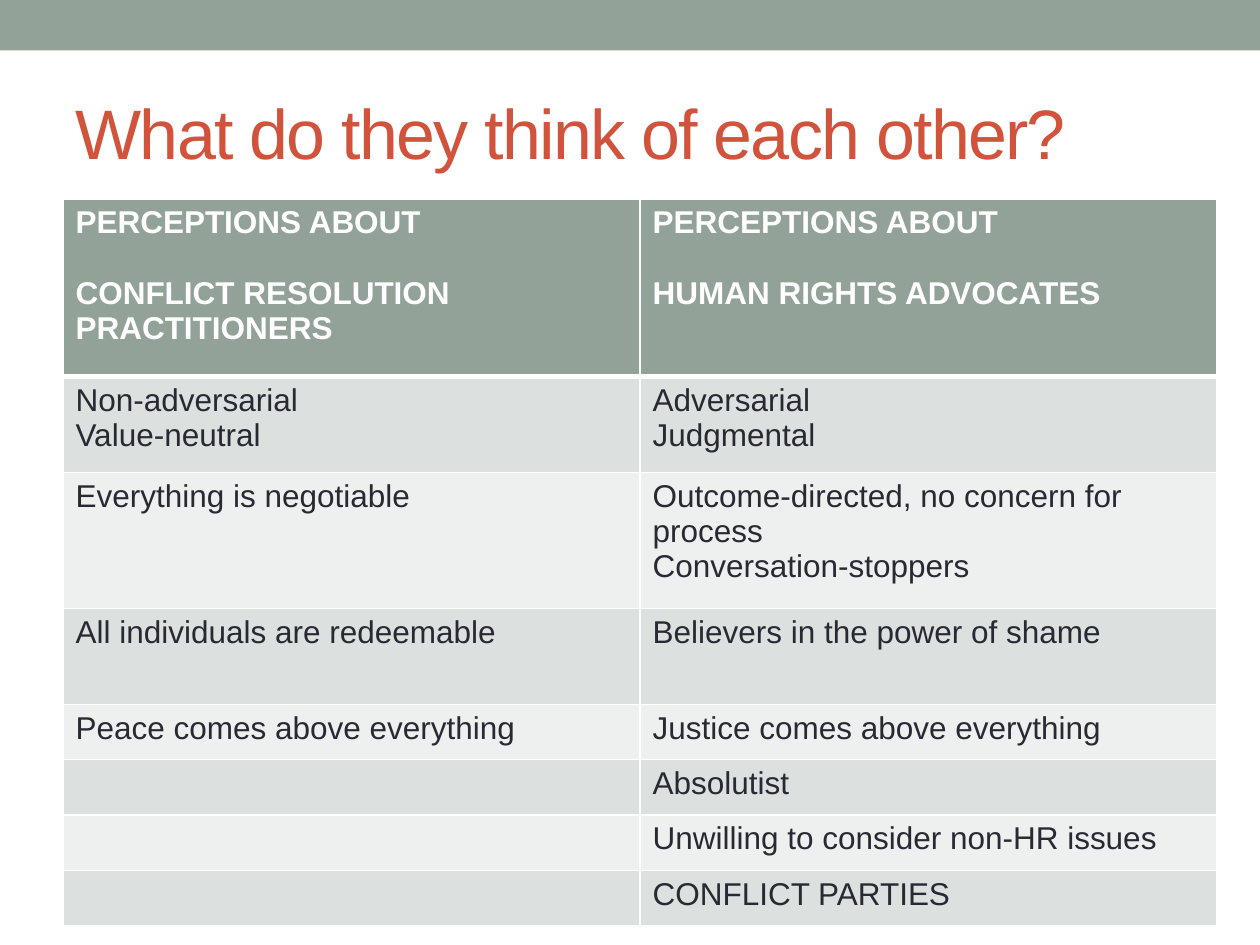
from lxml.etree import SubElement
from pptx import Presentation
from pptx.dml.color import RGBColor
from pptx.enum.shapes import MSO_SHAPE as Shape
from pptx.enum.text import MSO_ANCHOR as Anchor, PP_ALIGN as Align
from pptx.oxml.ns import qn
from pptx.util import Inches, Pt

SAGE = RGBColor(0x93, 0xA2, 0x99)
RED = RGBColor(0xD2, 0x53, 0x3C)
INK = RGBColor(0x29, 0x29, 0x34)
WHITE = RGBColor(0xFF, 0xFF, 0xFF)
BANDS = RGBColor(0xDC, 0xE0, 0xDE), RGBColor(0xEE, 0xF0, 0xEF)
FONT = "Arial"

# Content: each cell is a list of paragraphs
TITLE = "What do they think of each other?"
ROWS = [
    (["PERCEPTIONS ABOUT", "CONFLICT RESOLUTION PRACTITIONERS"],
     ["PERCEPTIONS ABOUT", "HUMAN RIGHTS ADVOCATES"]),
    (["Non-adversarial", "Value-neutral"], ["Adversarial", "Judgmental"]),
    (["Everything is negotiable"],
     ["Outcome-directed, no concern for process", "Conversation-stoppers"]),
    (["All individuals are redeemable"], ["Believers in the power of shame"]),
    (["Peace comes above everything"], ["Justice comes above everything"]),
    ([], ["Absolutist"]),
    ([], ["Unwilling to consider non-HR issues"]),
    ([], ["CONFLICT PARTIES"]),
]
HEIGHTS = [1.41, 0.76, 1.08, 0.76] + [0.44] * 4
COL = 4.58


def set_font(par, size, color, bold=False):
    font = par.font
    font.name, font.size, font.bold = FONT, Pt(size), bold
    font.color.rgb = color


def add_edges(cell, widths):
    props = cell._tc.get_or_add_tcPr()
    for side, width in widths.items():
        line = SubElement(props, qn(f"a:ln{side}"), w=str(Pt(width)))
        fill = SubElement(line, qn("a:solidFill"))
        SubElement(fill, qn("a:srgbClr"), val=str(WHITE))


def fill_cell(cell, lines, row):
    head = row == 0
    add_edges(cell, {"L": 1, "R": 1, "T": 3 if row == 1 else 1,
                     "B": 3 if head else 1})
    cell.fill.solid()
    cell.fill.fore_color.rgb = SAGE if head else BANDS[(row - 1) % 2]
    frame = cell.text_frame
    frame.text = "\n".join(lines)
    for i, par in enumerate(frame.paragraphs):
        set_font(par, 18, WHITE if head else INK, head)
        if head and i:
            par.space_before = Pt(20)


def main():
    prs = Presentation()
    prs.slide_width, prs.slide_height = Inches(10), Inches(7.5)
    slide = prs.slides.add_slide(prs.slide_layouts[5])

    # Top bar
    bar = slide.shapes.add_shape(Shape.RECTANGLE, 0, 0, Inches(10), Inches(0.4))
    bar.shadow.inherit = False
    bar.fill.solid()
    bar.fill.fore_color.rgb = SAGE
    bar.line.fill.background()

    # Title
    title = slide.shapes.title
    title.left, title.top = Inches(0.5), Inches(0.58)
    title.width, title.height = Inches(9), Inches(0.92)
    frame = title.text_frame
    frame.text = TITLE
    frame.vertical_anchor = Anchor.MIDDLE
    par = frame.paragraphs[0]
    par.alignment = Align.LEFT
    set_font(par, 40, RED)
    par.runs[0].font._element.set("spc", "-100")

    # Table
    table = slide.shapes.add_table(
        len(ROWS), 2, Inches(0.5), Inches(1.58),
        Inches(2 * COL), Inches(sum(HEIGHTS))).table
    for col in table.columns:
        col.width = Inches(COL)
    for r, (cells, height) in enumerate(zip(ROWS, HEIGHTS)):
        table.rows[r].height = Inches(height)
        for c, lines in enumerate(cells):
            fill_cell(table.cell(r, c), lines, r)

    prs.save("out.pptx")


if __name__ == "__main__":
    main()
